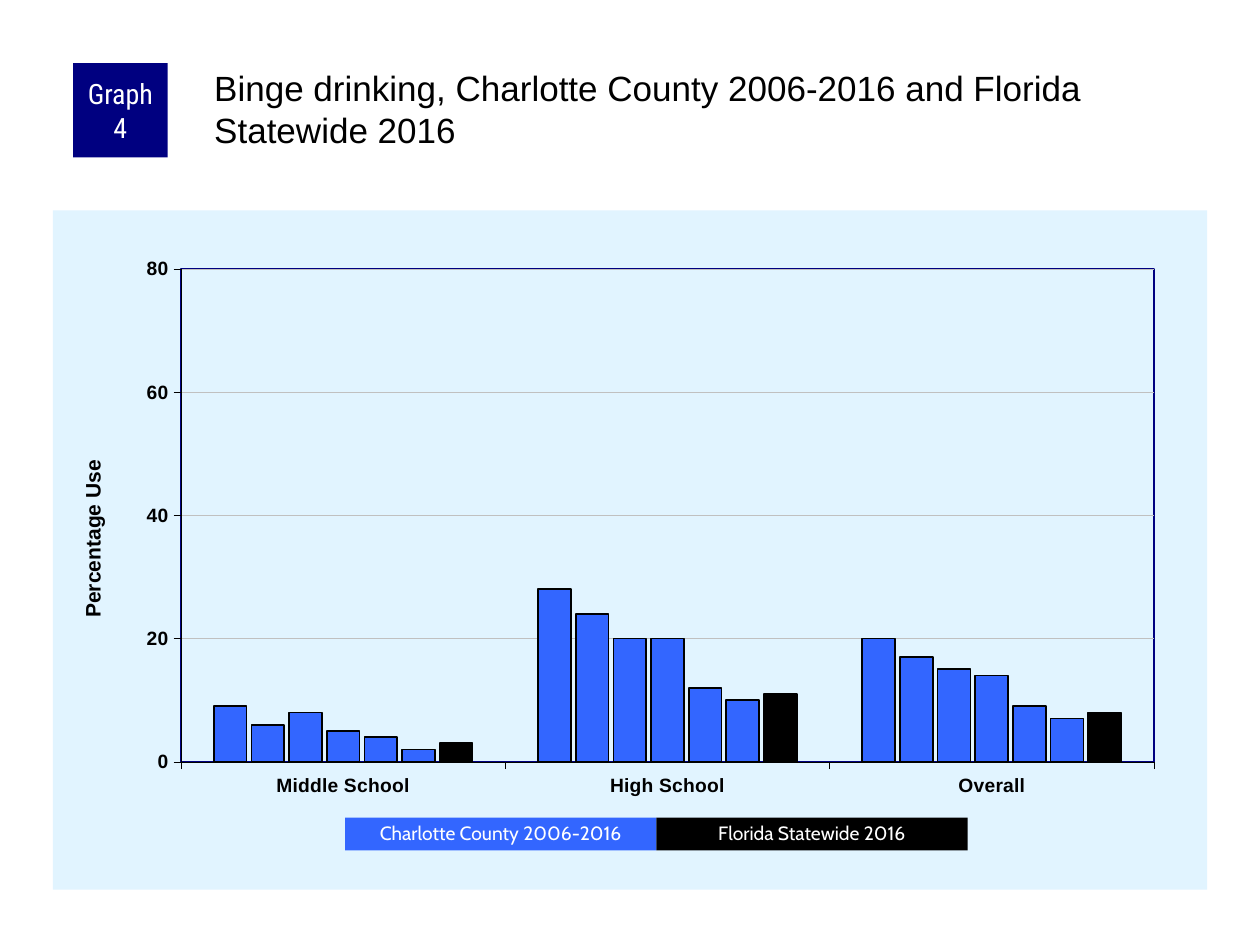
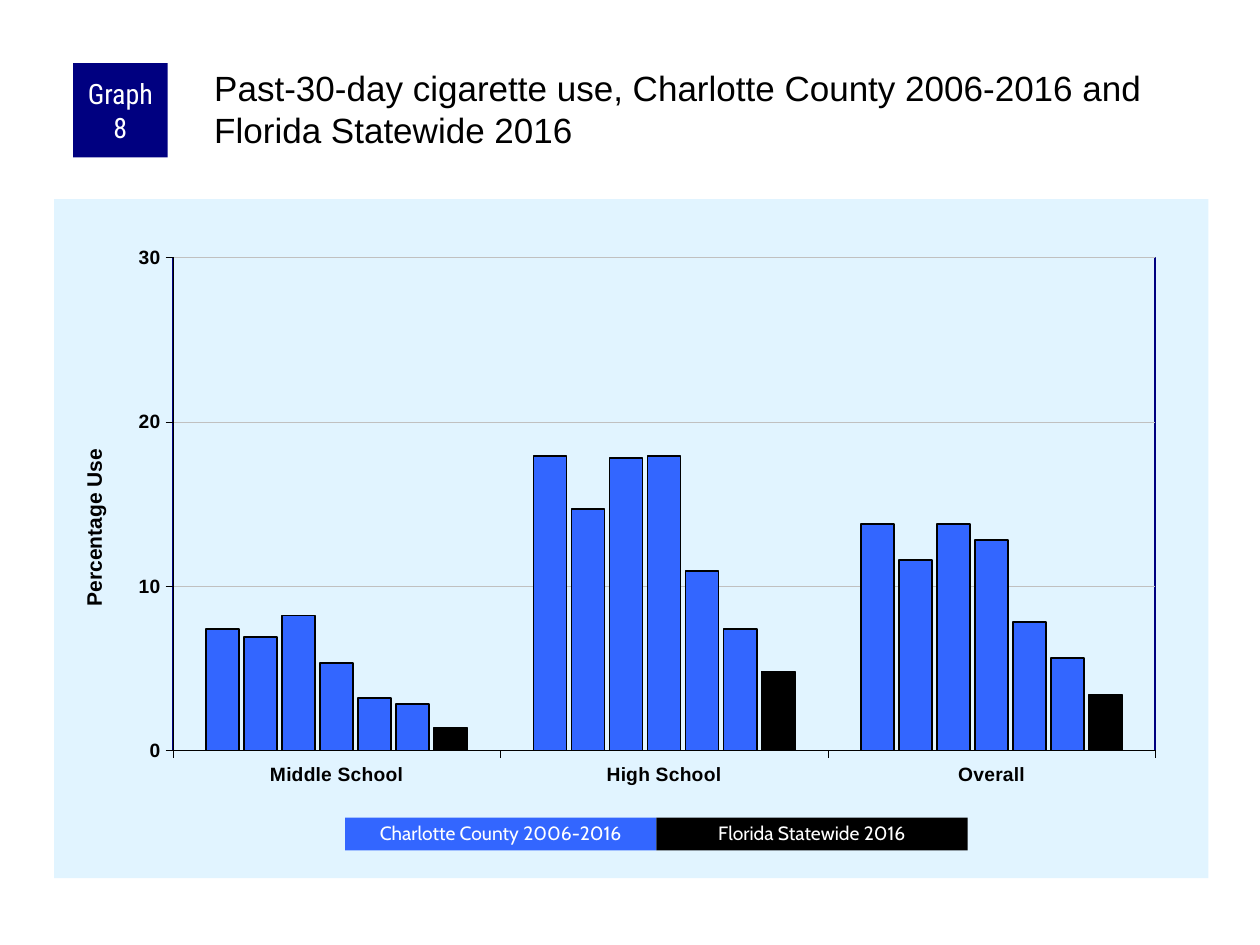
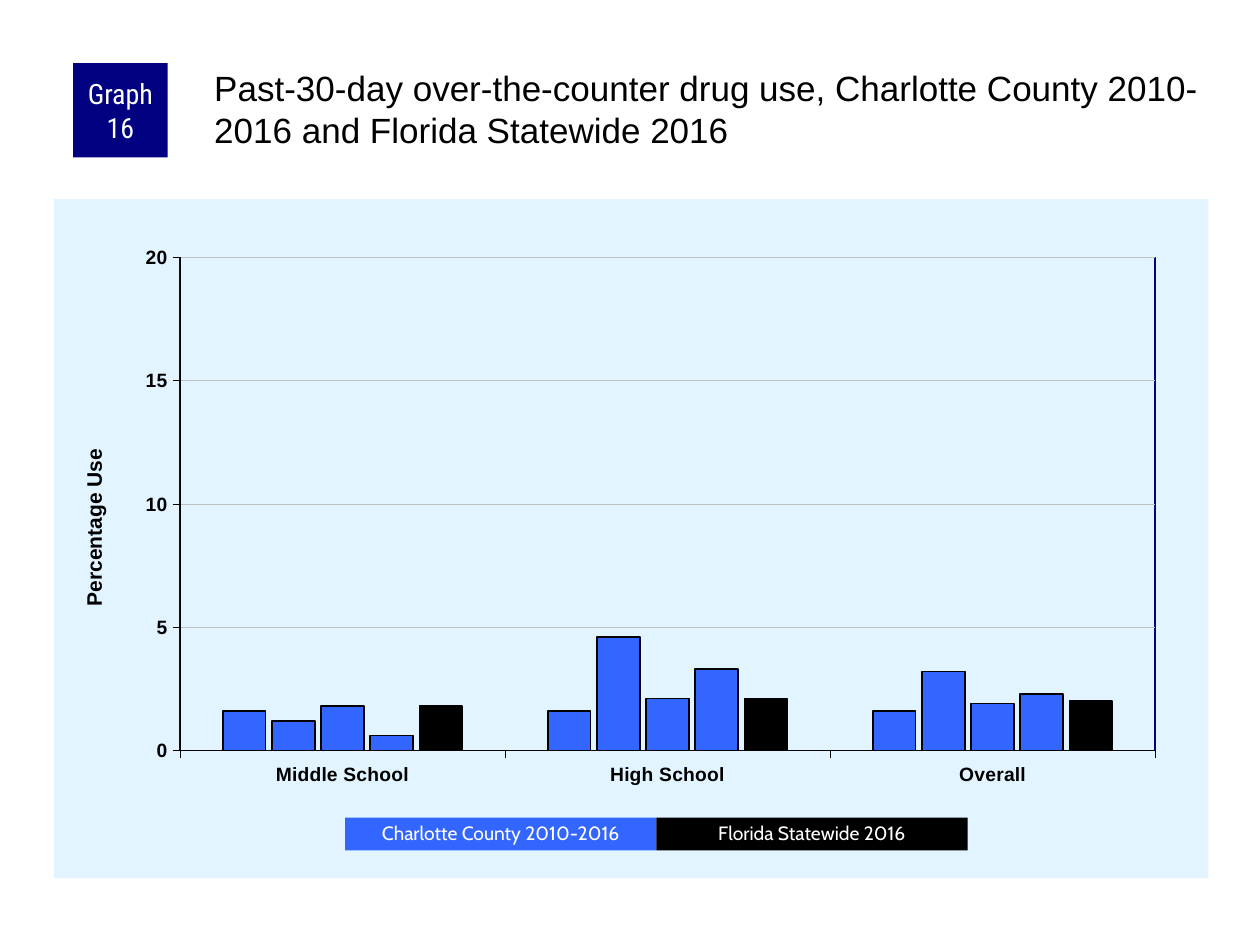
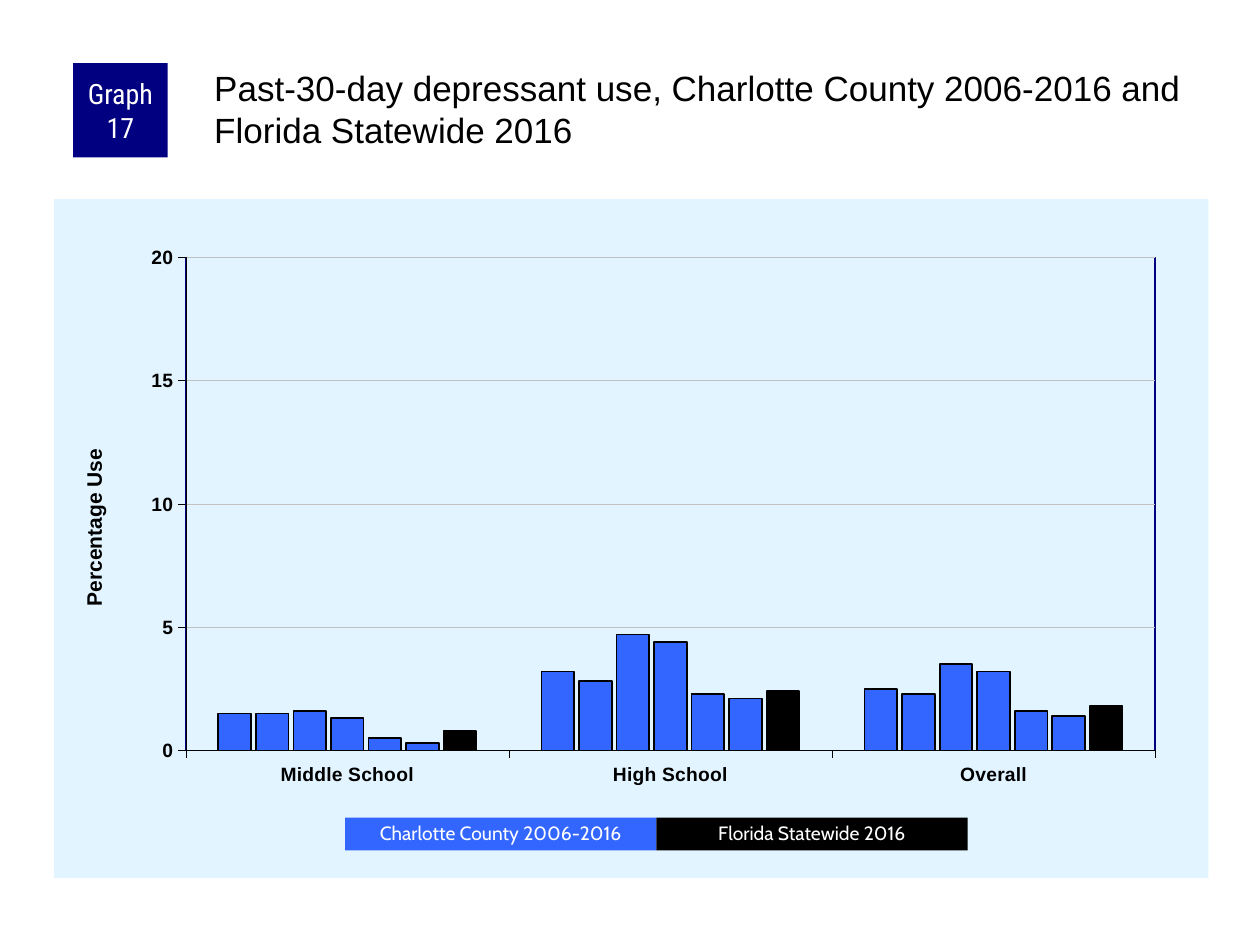
from lxml import etree
from pptx import Presentation
from pptx.chart.data import CategoryChartData
from pptx.dml.color import RGBColor
from pptx.enum.chart import XL_CHART_TYPE, XL_TICK_MARK
from pptx.enum.shapes import MSO_SHAPE
from pptx.enum.text import MSO_ANCHOR, MSO_AUTO_SIZE, PP_ALIGN
from pptx.oxml import parse_xml
from pptx.oxml.ns import nsdecls, qn
from pptx.util import Emu, Pt

COLUMNS = XL_CHART_TYPE.COLUMN_CLUSTERED
TICK_OUT, TICK_NONE = XL_TICK_MARK.OUTSIDE, XL_TICK_MARK.NONE
RECT = MSO_SHAPE.RECTANGLE
TOP, MIDDLE = MSO_ANCHOR.TOP, MSO_ANCHOR.MIDDLE
LEFT, CENTER = PP_ALIGN.LEFT, PP_ALIGN.CENTER
FIXED_SIZE = MSO_AUTO_SIZE.NONE

NAVY = RGBColor(0x00, 0x00, 0x80)
BLUE = RGBColor(0x33, 0x66, 0xFF)
PALE = RGBColor(0xE1, 0xF4, 0xFF)
SILVER = RGBColor(0xC0, 0xC0, 0xC0)
BLACK = RGBColor(0x00, 0x00, 0x00)
WHITE = RGBColor(0xFF, 0xFF, 0xFF)

# Content: county rows run by survey year, one value per school level
LEVELS = ["Middle School", "High School", "Overall"]
GRAPHS = [
    dict(number=4, topic="Binge drinking", years="2006-2016",
         top=80, step=20, chart_at=(42, 167), plot_left=0.111,
         county=[(9, 28, 20), (6, 24, 17), (8, 20, 15),
                 (5, 20, 14), (4, 12, 9), (2, 10, 7)],
         state=(3, 11, 8)),
    dict(number=8, topic="Past-30-day cigarette use", years="2006-2016",
         top=30, step=10, chart_at=(43, 158), plot_left=0.103,
         county=[(7.4, 17.9, 13.8), (6.9, 14.7, 11.6), (8.2, 17.8, 13.8),
                 (5.3, 17.9, 12.8), (3.2, 10.9, 7.8), (2.8, 7.4, 5.6)],
         state=(1.4, 4.8, 3.4)),
    dict(number=16, topic="Past-30-day over-the-counter drug use", years="2010-2016",
         top=20, step=5, chart_at=(43, 158), plot_left=0.109,
         county=[(1.6, 1.6, 1.6), (1.2, 4.6, 3.2), (1.8, 2.1, 1.9),
                 (0.6, 3.3, 2.3)],
         state=(1.8, 2.1, 2)),
    dict(number=17, topic="Past-30-day depressant use", years="2006-2016",
         top=20, step=5, chart_at=(43, 158), plot_left=0.114,
         county=[(1.5, 3.2, 2.5), (1.5, 2.8, 2.3), (1.6, 4.7, 3.5),
                 (1.3, 4.4, 3.2), (0.5, 2.3, 1.6), (0.3, 2.1, 1.4)],
         state=(0.8, 2.4, 1.8)),
]

# Layout, 100 px to the inch
SLIDE_SIZE = (1000, 750)
BADGE = (58, 50, 75, 75)
TITLE = (167, 50, 792, 83)
CHART_SIZE = (916, 539)
LEGEND_LEFT, LEGEND_TOP, KEY_WIDTH, KEY_HEIGHT = 274, 649, 247, 26
PLOT_RIGHT, PLOT_TOP, PLOT_HEIGHT = 0.954, 0.086, 0.726


def px(*lengths):
    return [Emu(length * 9144) for length in lengths]


def write(frame, text, size, font, color, align, anchor, insets, spacing=None):
    frame.word_wrap = True
    frame.auto_size = FIXED_SIZE
    frame.vertical_anchor = anchor
    (frame.margin_left, frame.margin_top,
     frame.margin_right, frame.margin_bottom) = px(*insets)
    paragraph = frame.paragraphs[0]
    paragraph.alignment = align
    paragraph.line_spacing = spacing
    run = paragraph.add_run()
    run.text = text
    run.font.size, run.font.name = Pt(size), font
    run.font.color.rgb = color


def add_block(slide, box, fill, text, size, font, insets, spacing=None):
    block = slide.shapes.add_shape(RECT, *px(*box))
    block.shadow.inherit = False
    block.fill.solid()
    block.fill.fore_color.rgb = fill
    block.line.fill.background()
    write(block.text_frame, text, size, font, WHITE, CENTER, MIDDLE, insets, spacing)


def set_line(line, color, width):
    line.color.rgb = color
    line.width = Pt(width)


def manual_layout(**places):
    """Build a c:layout element; children follow the order given."""
    layout = parse_xml(f"<c:layout {nsdecls('c')}><c:manualLayout/></c:layout>")
    for tag, value in places.items():
        etree.SubElement(layout[0], qn(f"c:{tag}")).set("val", str(value))
    return layout


def replace_layout(parent, layout, before):
    for old in parent.findall(qn("c:layout")):
        parent.remove(old)
    parent.find(qn(before)).addprevious(layout)


def style_axis(axis):
    axis.major_tick_mark, axis.minor_tick_mark = TICK_OUT, TICK_NONE
    set_line(axis.format.line, BLACK, 0.25)
    font = axis.tick_labels.font
    font.size, font.name, font.bold = Pt(11), "Arial", True
    font.color.rgb = BLACK


def style_areas(space, plot_left):
    """Pale chart background, navy plot frame and fixed plot position."""
    space.find(qn("c:chart")).addnext(parse_xml(
        f"<c:spPr {nsdecls('c', 'a')}><a:solidFill><a:srgbClr val='{PALE}'/></a:solidFill>"
        "<a:ln><a:noFill/></a:ln></c:spPr>"))
    plot_area = space.find(".//" + qn("c:plotArea"))
    plot_area.append(parse_xml(
        f"<c:spPr {nsdecls('c', 'a')}><a:noFill/><a:ln w='{Pt(1)}'><a:solidFill>"
        f"<a:srgbClr val='{NAVY}'/></a:solidFill></a:ln></c:spPr>"))
    replace_layout(plot_area, manual_layout(
        layoutTarget="inner", xMode="edge", yMode="edge", x=plot_left, y=PLOT_TOP,
        w=round(PLOT_RIGHT - plot_left, 3), h=PLOT_HEIGHT), "c:barChart")


def add_axis_caption(axis, space):
    caption = axis.axis_title.text_frame.paragraphs[0].add_run()
    caption.text = "Percentage Use"
    caption.font.size, caption.font.name, caption.font.bold = Pt(12), "Arial", True
    caption.font.color.rgb = BLACK
    title = space.find(f".//{qn('c:valAx')}/{qn('c:title')}")
    body = title.find(".//" + qn("a:bodyPr"))
    body.set("rot", "-5400000")
    body.set("vert", "horz")
    replace_layout(title, manual_layout(xMode="edge", yMode="edge", x=0.02, y=0.362),
                   "c:overlay")


def add_usage_chart(slide, graph):
    data = CategoryChartData()
    data.categories = LEVELS
    rows = graph["county"] + [graph["state"]]
    for number, values in enumerate(rows, 1):
        data.add_series(f"Series {number}", values)
    chart = slide.shapes.add_chart(
        COLUMNS, *px(*graph["chart_at"], *CHART_SIZE), data).chart
    chart.has_legend = chart.has_title = False
    chart.font.size, chart.font.name = Pt(8), "Arial"
    chart.font.color.rgb = BLACK

    columns = chart.plots[0]
    columns.gap_width, columns.overlap = 200, -15
    columns.vary_by_categories = False
    colors = [BLUE] * len(graph["county"]) + [BLACK]
    for series, color in zip(columns.series, colors):
        series.invert_if_negative = False
        series.format.fill.solid()
        series.format.fill.fore_color.rgb = color
        set_line(series.format.line, BLACK, 1)

    usage = chart.value_axis
    style_axis(chart.category_axis)
    style_axis(usage)
    usage.minimum_scale, usage.maximum_scale = 0, graph["top"]
    usage.major_unit = graph["step"]
    set_line(usage.major_gridlines.format.line, SILVER, 0.25)

    space = chart.element
    add_axis_caption(usage, space)
    style_areas(space, graph["plot_left"])


def add_graph_slide(deck, graph):
    slide = deck.slides.add_slide(deck.slide_layouts[5])
    county, state = f"Charlotte County {graph['years']}", "Florida Statewide 2016"

    add_usage_chart(slide, graph)
    add_block(slide, BADGE, NAVY, f"Graph {graph['number']}", 16, "Roboto Condensed",
              (5, 0, 5, 0))

    heading = slide.shapes.title
    heading.left, heading.top, heading.width, heading.height = px(*TITLE)
    write(heading.text_frame, f"{graph['topic']}, {county} and {state}", 20, "Arial",
          BLACK, LEFT, TOP, (3, 3, 0, 0))

    # Colour key
    for column, (label, fill) in enumerate([(county, BLUE), (state, BLACK)]):
        box = (LEGEND_LEFT + column * KEY_WIDTH, LEGEND_TOP, KEY_WIDTH, KEY_HEIGHT)
        add_block(slide, box, fill, label, 11, "Cabin", (10, 5, 10, 5), 0.9)


def main():
    deck = Presentation()
    deck.slide_width, deck.slide_height = px(*SLIDE_SIZE)
    for graph in GRAPHS:
        add_graph_slide(deck, graph)
    deck.save("out.pptx")


if __name__ == "__main__":
    main()
